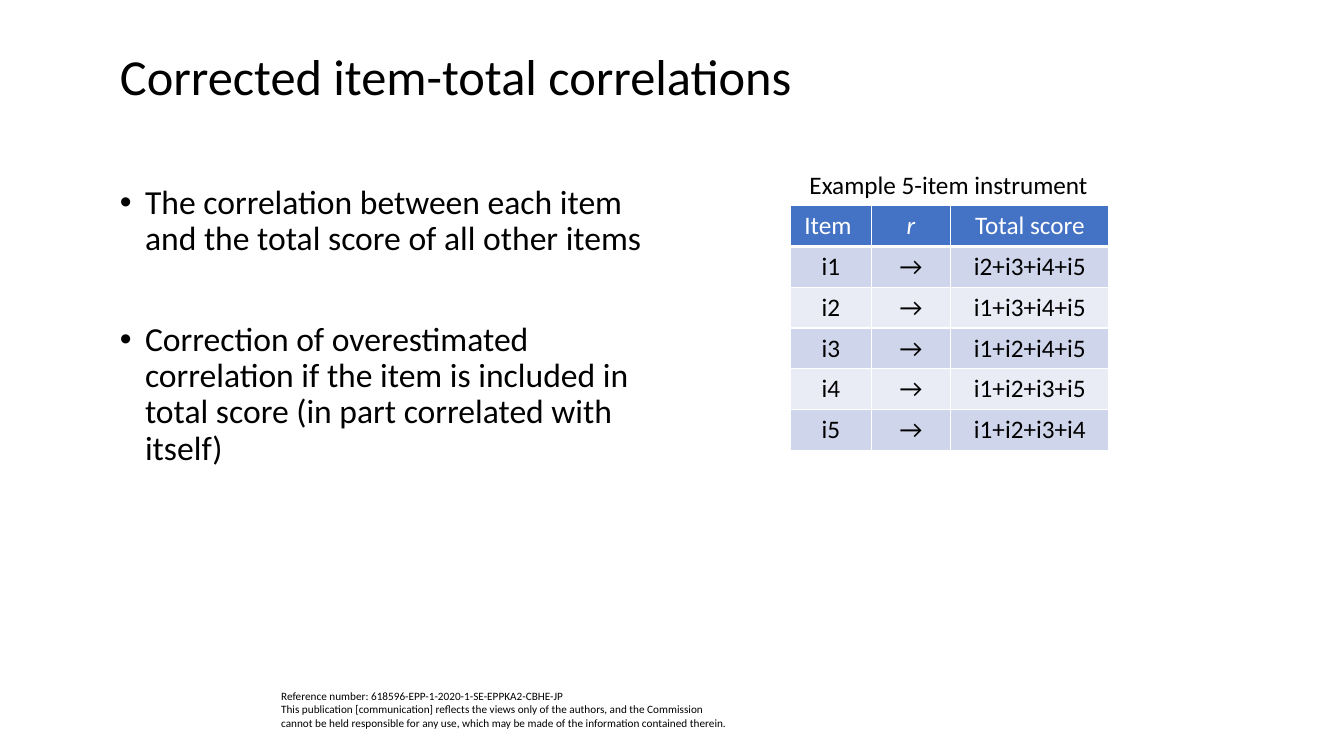
from lxml import etree
from pptx import Presentation
from pptx.dml.color import RGBColor
from pptx.enum.text import MSO_ANCHOR, MSO_AUTO_SIZE, PP_ALIGN
from pptx.oxml.ns import qn
from pptx.util import Inches, Pt

LEFT, CENTER = PP_ALIGN.LEFT, PP_ALIGN.CENTER
MIDDLE = MSO_ANCHOR.MIDDLE
FIXED, GROW = MSO_AUTO_SIZE.NONE, MSO_AUTO_SIZE.SHAPE_TO_FIT_TEXT
FONT = "Calibri"
BLACK, WHITE = "000000", "FFFFFF"
HEAD, BANDS = "4472C4", ("CFD5EA", "E9EBF5")

TITLE = "Corrected item-total correlations"
POINTS = (
    "The correlation between each item and the total score of all other items",
    "Correction of overestimated correlation if the item is included in "
    "total score (in part correlated with itself)",
)
CAPTION = "Example 5-item instrument"
NOTICE = (
    "Reference number: 618596-EPP-1-2020-1-SE-EPPKA2-CBHE-JP",
    "This publication [communication] reflects the views only of the authors, "
    "and the Commission cannot be held responsible for any use, which may be "
    "made of the information contained therein.",
)
ITEMS = [f"i{n}" for n in range(1, 6)]


def color(code):
    """Turn a hex string into a colour."""
    return RGBColor.from_string(code)


def add_run(para, text, size, code=BLACK, italic=False):
    """Add one formatted run to a paragraph."""
    run = para.add_run()
    run.text = text
    run.font.name, run.font.size = FONT, Pt(size)
    run.font.italic = italic
    run.font.color.rgb = color(code)


def add_box(slide, box, wrap=True, fit=FIXED):
    """Add a text box and return its frame."""
    frame = slide.shapes.add_textbox(*map(Inches, box)).text_frame
    frame.word_wrap, frame.auto_size = wrap, fit
    return frame


def add_title(slide, box):
    """Place and fill the title placeholder."""
    title = slide.shapes.title
    title.left, title.top, title.width, title.height = map(Inches, box)
    frame = title.text_frame
    frame.auto_size, frame.vertical_anchor = FIXED, MIDDLE
    para = frame.paragraphs[0]
    para.alignment, para.line_spacing = LEFT, 0.9
    add_run(para, TITLE, 36)


def add_points(slide, box):
    """Add the bulleted points."""
    frame = add_box(slide, box)
    for num, text in enumerate(POINTS):
        para = frame.add_paragraph() if num else frame.paragraphs[0]
        props = para._p.get_or_add_pPr()
        props.set("marL", str(Inches(0.25)))
        props.set("indent", str(Inches(-0.25)))
        etree.SubElement(props, qn("a:buFont")).set("typeface", "Arial")
        etree.SubElement(props, qn("a:buChar")).set("char", "•")
        para.line_spacing = 0.9
        if num:
            para.space_before = Pt(46)
        add_run(para, text, 24)


def add_edges(cell, head):
    """Draw the white borders of a cell."""
    props = cell._tc.get_or_add_tcPr()
    for side in "LRTB":
        width = 3 if head and side == "B" else 1
        line = etree.SubElement(props, qn(f"a:ln{side}"), w=str(Pt(width)))
        fill = etree.SubElement(line, qn("a:solidFill"))
        etree.SubElement(fill, qn("a:srgbClr"), val=WHITE)


def add_scores(slide, box):
    """Add the table of items and the totals of the other items."""
    rows = [("Item ", "r", "Total score")]
    for item in ITEMS:
        rows.append((item, "→", "+".join(i for i in ITEMS if i != item)))
    table = slide.shapes.add_table(len(rows), 3, *map(Inches, box)).table
    for col, width in zip(table.columns, (0.8, 0.79, 1.57)):
        col.width = Inches(width)
    for r, row in enumerate(rows):
        for c, text in enumerate(row):
            cell, head = table.cell(r, c), r == 0
            add_edges(cell, head)
            cell.fill.solid()
            cell.fill.fore_color.rgb = color(HEAD if head else BANDS[(r - 1) % 2])
            para = cell.text_frame.paragraphs[0]
            para.alignment = CENTER
            add_run(para, text, 18, WHITE if head else BLACK, text == "r")


def add_caption(slide, box):
    """Add the caption over the table."""
    frame = add_box(slide, box, False, GROW)
    add_run(frame.paragraphs[0], CAPTION, 18)


def add_notice(slide, box):
    """Add the funding notice at the foot."""
    para = add_box(slide, box, fit=GROW).paragraphs[0]
    add_run(para, NOTICE[0], 8)
    para.add_line_break()
    add_run(para, NOTICE[1], 8)


def main():
    """Build and save the slide."""
    deck = Presentation()
    deck.slide_width, deck.slide_height = Inches(13.33), Inches(7.5)
    slide = deck.slides.add_slide(deck.slide_layouts[5])
    add_notice(slide, (2.69, 6.79, 4.64, 0.5))
    add_title(slide, (1.09, 0.38, 11.5, 0.81))
    add_scores(slide, (7.84, 2.04, 3.16, 2.43))
    add_points(slide, (1.09, 1.79, 5.58, 2.94))
    add_caption(slide, (7.93, 1.63, 2.99, 0.4))
    deck.save("out.pptx")


if __name__ == "__main__":
    main()
